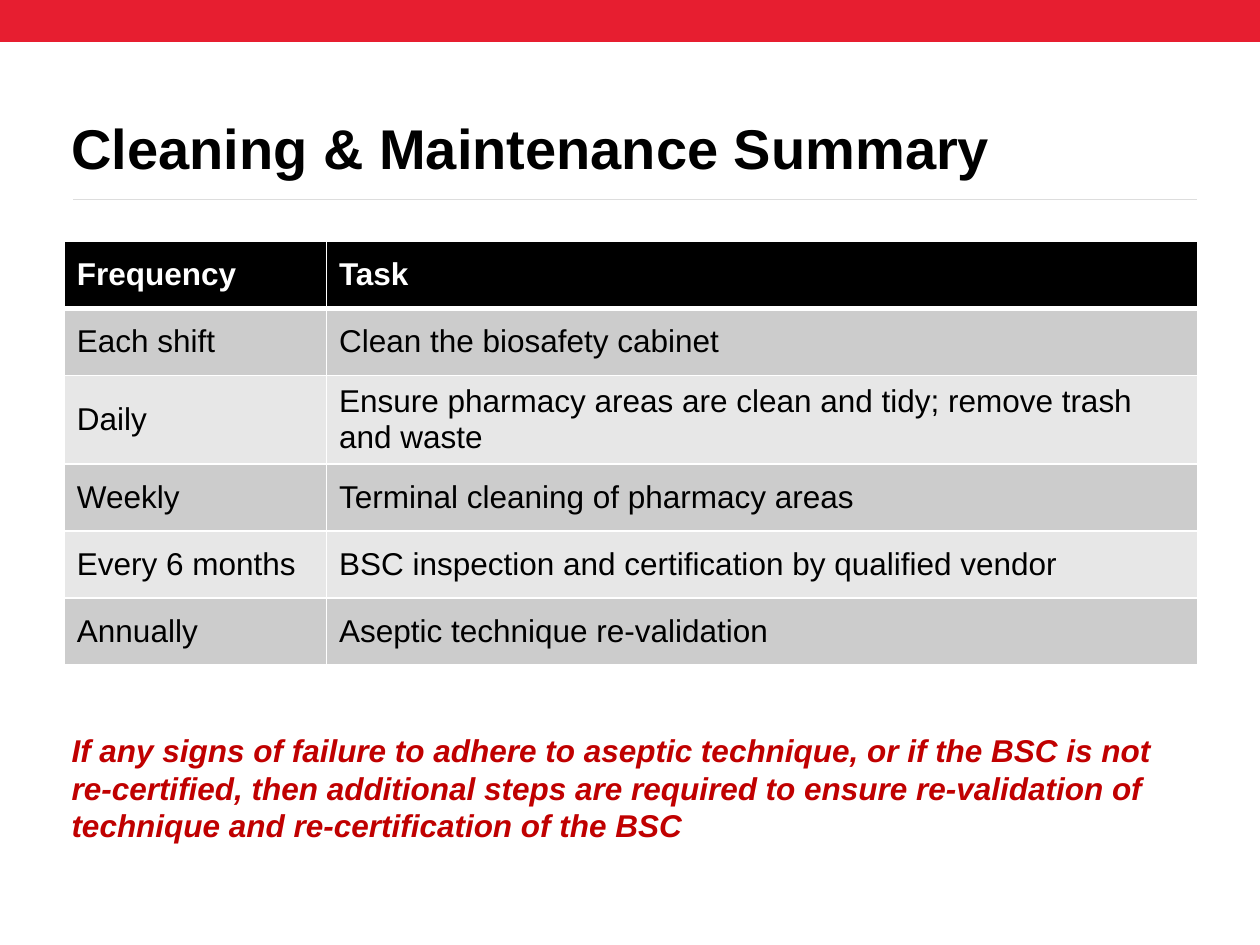
from dataclasses import dataclass
from lxml.etree import SubElement as Sub
from pptx import Presentation
from pptx.dml.color import RGBColor as Rgb
from pptx.enum.shapes import MSO_CONNECTOR as Conn, MSO_SHAPE as Kind
from pptx.enum.text import MSO_ANCHOR as Anchor
from pptx.oxml.ns import qn
from pptx.util import Pt


# Colours and type sizes
@dataclass(frozen=True)
class Theme:
    font: str = "Arial"
    red: str = "E71E30"
    rule: str = "DDDDDD"
    ink: str = "000000"
    paper: str = "FFFFFF"
    dark: str = "CCCCCC"
    light: str = "E7E7E7"
    alert: str = "C00000"
    title: int = 32
    body: int = 18


@dataclass(frozen=True)
class Box:
    left: float
    top: float
    width: float
    height: float

    def place(self) -> tuple:
        return tuple(Pt(v) for v in (self.left, self.top, self.width, self.height))


@dataclass(frozen=True)
class Task:
    when: str
    what: str


LOOK = Theme()
HEAD = Task("Frequency", "Task")
TASKS = [
    Task("Each shift", "Clean the biosafety cabinet"),
    Task("Daily", "Ensure pharmacy areas are clean and tidy; remove trash and waste"),
    Task("Weekly", "Terminal cleaning of pharmacy areas"),
    Task("Every 6 months", "BSC inspection and certification by qualified vendor"),
    Task("Annually", "Aseptic technique re-validation"),
]
NOTE = (
    "If any signs of failure to adhere to aseptic technique, or if the BSC is not "
    "re-certified, then additional steps are required to ensure re-validation of "
    "technique and re-certification of the BSC"
)
COLS = (149.8, 498)
ROW = 38.3


def write(frame, text: str, size: int, color: str, **style) -> None:
    """Put one styled paragraph into a text frame."""
    para = frame.paragraphs[0]
    run = para.add_run()
    run.text = text
    form = {"name": LOOK.font, "size": Pt(size), **style}
    for key, val in form.items():
        setattr(run.font, key, val)
    run.font.color.rgb = Rgb.from_string(color)


def label(slide, box: Box, text: str, size: int, color: str,
          anchor: Anchor, space: float | None = None, **style) -> None:
    frame = slide.shapes.add_textbox(*box.place()).text_frame
    frame.word_wrap = True
    frame.vertical_anchor = anchor
    frame.paragraphs[0].line_spacing = space
    write(frame, text, size, color, **style)


def edge(cell, base: float) -> None:
    """Draw the cell borders, which must come before its fill."""
    props = cell._tc.get_or_add_tcPr()
    for tag, wide in {"lnL": 1, "lnR": 1, "lnT": 1, "lnB": base}.items():
        line = Sub(props, qn(f"a:{tag}"), w=str(Pt(wide)))
        Sub(Sub(line, qn("a:solidFill")), qn("a:srgbClr"), val=LOOK.paper)


def grid(slide, box: Box, rows: list[Task]) -> None:
    table = slide.shapes.add_table(len(rows), len(COLS), *box.place()).table
    for col, wide in zip(table.columns, COLS):
        col.width = Pt(wide)
    for r, task in enumerate(rows):
        table.rows[r].height = Pt(ROW)
        head = r == 0
        fill = LOOK.ink if head else (LOOK.light, LOOK.dark)[r % 2]
        for c, text in enumerate((task.when, task.what)):
            cell = table.cell(r, c)
            edge(cell, 3 if head else 1)
            cell.fill.solid()
            cell.fill.fore_color.rgb = Rgb.from_string(fill)
            cell.vertical_anchor = Anchor.MIDDLE
            write(cell.text_frame, text, LOOK.body,
                  LOOK.paper if head else LOOK.ink, bold=head)


def band(slide, box: Box) -> None:
    bar = slide.shapes.add_shape(Kind.RECTANGLE, *box.place())
    bar.shadow.inherit = False
    bar.fill.solid()
    bar.fill.fore_color.rgb = Rgb.from_string(LOOK.red)
    bar.line.fill.background()


def rule(slide, left: float, right: float, y: float) -> None:
    line = slide.shapes.add_connector(Conn.STRAIGHT, Pt(left), Pt(y), Pt(right), Pt(y))
    line.line.color.rgb = Rgb.from_string(LOOK.rule)
    line.line.width = Pt(0.75)
    Sub(line._element.spPr, qn("a:effectLst"))


def main() -> None:
    deck = Presentation()
    deck.slide_width, deck.slide_height = Pt(720), Pt(540)
    slide = deck.slides.add_slide(deck.slide_layouts[6])

    # Top band and title
    band(slide, Box(0, 0, 720, 24))
    rule(slide, 42, 684, 114)
    label(slide, Box(33.8, 60, 650, 54), "Cleaning & Maintenance Summary",
          LOOK.title, LOOK.ink, Anchor.MIDDLE, 0.85, bold=True)

    # Task table
    rows = [HEAD, *TASKS]
    grid(slide, Box(36.8, 138, sum(COLS), ROW * len(rows)), rows)

    # Warning
    label(slide, Box(33.8, 414, 650, 72.7), NOTE, LOOK.body, LOOK.alert,
          Anchor.TOP, bold=True, italic=True)

    deck.save("out.pptx")


if __name__ == "__main__":
    main()
